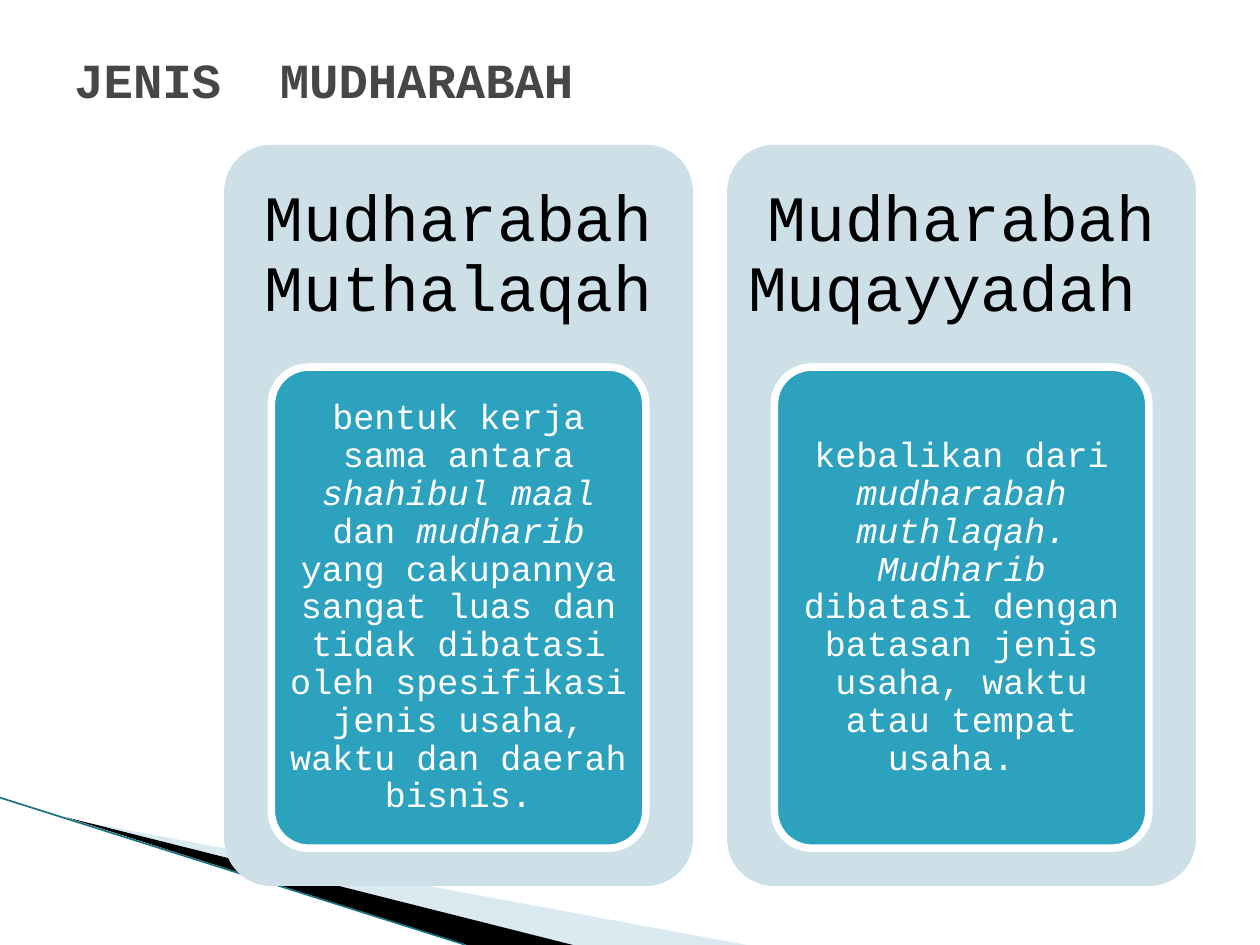
from dataclasses import dataclass

from lxml.etree import SubElement
from pptx import Presentation
from pptx.dml.color import RGBColor
from pptx.enum.shapes import MSO_CONNECTOR, MSO_SHAPE
from pptx.enum.text import MSO_ANCHOR, PP_ALIGN
from pptx.oxml.ns import qn
from pptx.shapes.autoshape import Shape
from pptx.slide import Slide
from pptx.util import Cm, Pt

FONT = "Courier New"
BLACK = RGBColor(0x00, 0x00, 0x00)
WHITE = RGBColor(0xFF, 0xFF, 0xFF)
GRAY = RGBColor(0x46, 0x46, 0x46)
PALE_BLUE = RGBColor(0xCD, 0xE0, 0xE8)
TEAL = RGBColor(0x2D, 0xA2, 0xBF)
DARK_TEAL = RGBColor(0x1B, 0x70, 0x82)
WEDGE_BLUE = RGBColor(0xA0, 0xCB, 0xDC)

PANEL_LEFT, PANEL_TOP, PANEL_WIDTH, PANEL_HEIGHT = 4.52, 2.92, 9.45, 14.94
PANEL_STEP = 10.14
HEADING_HEIGHT = 4.47
CARD_INSET, CARD_TOP, CARD_HEIGHT = 0.95, 7.4, 9.7
TEXT_INSET = 0.22


@dataclass(frozen=True)
class Span:
    text: str
    italic: bool = False


@dataclass(frozen=True)
class Area:
    left: float
    top: float
    width: float
    height: float

    def lengths(self) -> tuple[Cm, Cm, Cm, Cm]:
        return Cm(self.left), Cm(self.top), Cm(self.width), Cm(self.height)


@dataclass(frozen=True)
class Style:
    size: int
    color: RGBColor
    align: PP_ALIGN = PP_ALIGN.CENTER
    spacing: float = 0.9
    bold: bool = False
    margin_x: float = 0.15
    margin_y: float = 0.1


@dataclass(frozen=True)
class Kind:
    heading: str
    description: tuple[Span, ...]


TITLE_STYLE = Style(28, GRAY, PP_ALIGN.LEFT, 1.0, True, 0.25, 0.13)
HEADING_STYLE = Style(37, BLACK, margin_x=0.38, margin_y=0.38)
BODY_STYLE = Style(20, WHITE)

KINDS = (
    Kind("Mudharabah Muthalaqah", (
        Span("bentuk kerja sama antara "),
        Span("shahibul maal ", True),
        Span("dan "),
        Span("mudharib", True),
        Span(" yang cakupannya sangat luas dan tidak dibatasi oleh "
             "spesifikasi jenis usaha, waktu dan daerah bisnis."),
    )),
    Kind("Mudharabah Muqayyadah ", (
        Span("kebalikan dari "),
        Span("mudharabah muthlaqah. Mudharib ", True),
        Span("dibatasi dengan batasan jenis usaha, waktu atau tempat usaha. "),
    )),
)


def add_text(page: Slide, area: Area, spans: tuple[Span, ...], style: Style) -> None:
    box = page.shapes.add_textbox(*area.lengths())
    frame = box.text_frame
    frame.word_wrap = True
    frame.vertical_anchor = MSO_ANCHOR.MIDDLE
    frame.margin_left = frame.margin_right = Cm(style.margin_x)
    frame.margin_top = frame.margin_bottom = Cm(style.margin_y)
    para = frame.paragraphs[0]
    para.alignment = style.align
    para.line_spacing = style.spacing
    para.font.name = FONT
    para.font.size = Pt(style.size)
    para.font.bold = style.bold
    para.font.color.rgb = style.color
    for span in spans:
        run = para.add_run()
        run.text = span.text
        if span.italic:
            run.font.italic = True


def add_rounded(page: Slide, area: Area, fill: RGBColor) -> Shape:
    shape = page.shapes.add_shape(MSO_SHAPE.ROUNDED_RECTANGLE, *area.lengths())
    shape.adjustments[0] = 0.1
    shape.shadow.inherit = False
    shape.fill.solid()
    shape.fill.fore_color.rgb = fill
    shape.line.fill.background()
    return shape


def add_wedge(page: Slide, points: list[tuple[float, float]], fill: RGBColor) -> Shape:
    corners = [(Cm(x), Cm(y)) for x, y in points]
    builder = page.shapes.build_freeform(*corners[0])
    builder.add_line_segments(corners[1:], close=True)
    wedge = builder.convert_to_shape()
    wedge.shadow.inherit = False
    wedge.fill.solid()
    wedge.fill.fore_color.rgb = fill
    wedge.line.fill.background()
    return wedge


def add_corner(page: Slide) -> None:
    pale = add_wedge(page, [(1.4, 16.52), (15.05, 19.05), (11.55, 19.05)], WEDGE_BLUE)
    color = pale.fill._xPr.find(qn("a:solidFill"))[0]
    SubElement(color, qn("a:alpha"), val="40000")
    add_wedge(page, [(1.35, 16.48), (11.55, 19.05), (9.4, 19.05)], BLACK)
    edge = page.shapes.add_connector(
        MSO_CONNECTOR.STRAIGHT, Cm(0), Cm(16.08), Cm(9.39), Cm(19.05))
    edge.line.color.rgb = DARK_TEAL
    edge.line.width = Pt(0.95)
    SubElement(edge._element.spPr, qn("a:effectLst"))


def add_kind(page: Slide, left: float, kind: Kind) -> None:
    add_rounded(page, Area(left, PANEL_TOP, PANEL_WIDTH, PANEL_HEIGHT), PALE_BLUE)
    add_text(page, Area(left, PANEL_TOP, PANEL_WIDTH, HEADING_HEIGHT),
             (Span(kind.heading),), HEADING_STYLE)
    card_left = left + CARD_INSET
    card_width = PANEL_WIDTH - 2 * CARD_INSET
    card = add_rounded(page, Area(card_left, CARD_TOP, card_width, CARD_HEIGHT), TEAL)
    card.line.color.rgb = WHITE
    card.line.width = Pt(4.33)
    add_text(page, Area(card_left + TEXT_INSET, CARD_TOP + TEXT_INSET,
                        card_width - 2 * TEXT_INSET, CARD_HEIGHT - 2 * TEXT_INSET),
             kind.description, BODY_STYLE)


def main() -> None:
    """Build the slide on the two kinds of mudharabah."""
    deck = Presentation()
    deck.slide_width, deck.slide_height = Cm(25.4), Cm(19.05)
    page = deck.slides.add_slide(deck.slide_layouts[6])
    add_corner(page)
    add_text(page, Area(1.25, 0, 22.86, 3.18), (Span("JENIS  MUDHARABAH"),), TITLE_STYLE)
    for index, kind in enumerate(KINDS):
        add_kind(page, PANEL_LEFT + index * PANEL_STEP, kind)
    deck.save("out.pptx")


if __name__ == "__main__":
    main()
